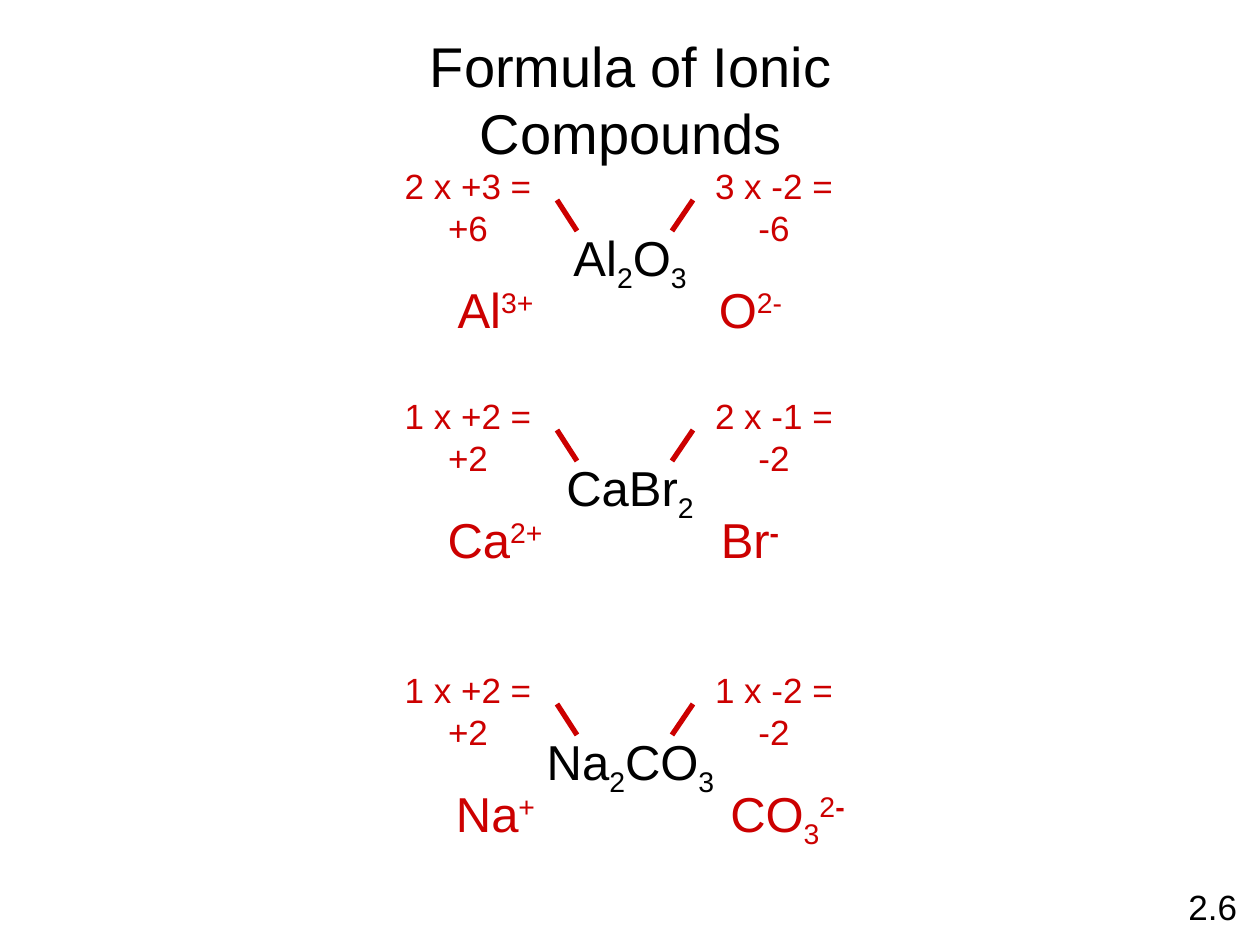
from dataclasses import dataclass
from lxml.etree import SubElement
from pptx import Presentation
from pptx.dml.color import RGBColor
from pptx.enum.shapes import MSO_CONNECTOR
from pptx.enum.text import MSO_ANCHOR, MSO_AUTO_SIZE as AutoSize, PP_ALIGN
from pptx.oxml.ns import qn
from pptx.util import Emu, Pt


@dataclass(frozen=True)
class Theme:
    font: str = "Arial"
    black: RGBColor = RGBColor(0x00, 0x00, 0x00)
    red: RGBColor = RGBColor(0xCC, 0x00, 0x00)
    title: int = 32
    formula: int = 28
    note: int = 20
    line: int = 3


THEME = Theme()
SUB, SUP = -25, 30
COMPOUNDS = [
    dict(top=158,
         formula=(144, [("Al",), ("2", SUB), ("O",), ("3", SUB)]),
         charges=("2 x +3 = +6", "3 x -2 = -6"),
         ions=[(127, 107, [("Al",), ("3+", SUP)]),
               (382, 93, [("O",), ("2-", SUP)])]),
    dict(top=388,
         formula=(156, [("CaBr",), ("2", SUB)]),
         charges=("1 x +2 = +2", "2 x -1 = -2"),
         ions=[(127, 126, [("Ca",), ("2+", SUP)]),
               (382, 86, [("Br",), ("-", SUP, True)])]),
    dict(top=662,
         formula=(199, [("Na",), ("2", SUB), ("CO",), ("3", SUB)]),
         charges=("1 x +2 = +2", "1 x -2 = -2"),
         ions=[(127, 107, [("Na",), ("+", SUP)]),
               (419, 147, [("CO",), ("3", SUB), ("2", SUP), ("-", SUP, True)])]),
]


def px(n):
    return Emu(round(n * 914400 / 126))


def style(r, size, color):
    r.font.name = THEME.font
    r.font.size = Pt(size)
    r.font.color.rgb = color


def add_text(shapes, box, runs, size, color, align=PP_ALIGN.CENTER, wrap=False):
    tf = shapes.add_textbox(*map(px, box)).text_frame
    tf.word_wrap = wrap
    tf.auto_size = AutoSize.SHAPE_TO_FIT_TEXT
    p = tf.paragraphs[0]
    p.alignment = align
    for text, baseline, bold in ((*run, 0, False)[:3] for run in runs):
        r = p.add_run()
        r.text = text
        style(r, size, color)
        if baseline:
            r._r.get_or_add_rPr().set("baseline", f"{baseline}000")
        if bold:
            r.font.bold = True


def add_line(shapes, x1, y1, x2, y2):
    s = shapes.add_connector(MSO_CONNECTOR.STRAIGHT, *map(px, (x1, y1, x2, y2)))
    s.line.color.rgb = THEME.red
    s.line.width = Pt(THEME.line)
    SubElement(s._element.spPr, qn("a:effectLst"))


def add_title(s, left, top, width, height):
    sp = s.shapes.title
    sp.left, sp.top, sp.width, sp.height = map(px, (left, top, width, height))
    tf = sp.text_frame
    tf.text = "Formula of Ionic Compounds"
    tf.word_wrap = True
    tf.auto_size = AutoSize.NONE
    tf.vertical_anchor = MSO_ANCHOR.TOP
    p = tf.paragraphs[0]
    p.alignment = PP_ALIGN.CENTER
    style(p.runs[0], THEME.title, THEME.black)


def add_charges(s, left, top, charges):
    shapes = s.shapes.add_group_shape().shapes
    columns = [(1, 198, 189, 209), (316, 180, 325, 304)]
    for text, (x, width, outer, inner) in zip(charges, columns):
        add_text(shapes, (left + x, top, width, 54), [(text,)],
                 THEME.note, THEME.red, wrap=True)
        add_line(shapes, left + outer, top + 42, left + inner, top + 73)


def add_compound(s, left, top, formula, charges, ions):
    width, runs = formula
    add_text(s.shapes, (left + 262 - width // 2, top + 63, width, 72), runs,
             THEME.formula, THEME.black)
    add_charges(s, left, top, charges)
    for center, width, runs in ions:
        add_text(s.shapes, (left + center - width // 2, top + 115, width, 72),
                 runs, THEME.formula, THEME.red)


def main():
    prs = Presentation()
    prs.slide_width, prs.slide_height = px(1260), px(945)
    s = prs.slides.add_slide(prs.slide_layouts[5])
    add_title(s, 271, 25, 720, 148)
    for compound in COMPOUNDS:
        add_compound(s, 368, **compound)
    add_text(s.shapes, (1176, 879, 74, 54), [("2.6",)],
             THEME.note, THEME.black, PP_ALIGN.LEFT)
    prs.save("out.pptx")


if __name__ == "__main__":
    main()
